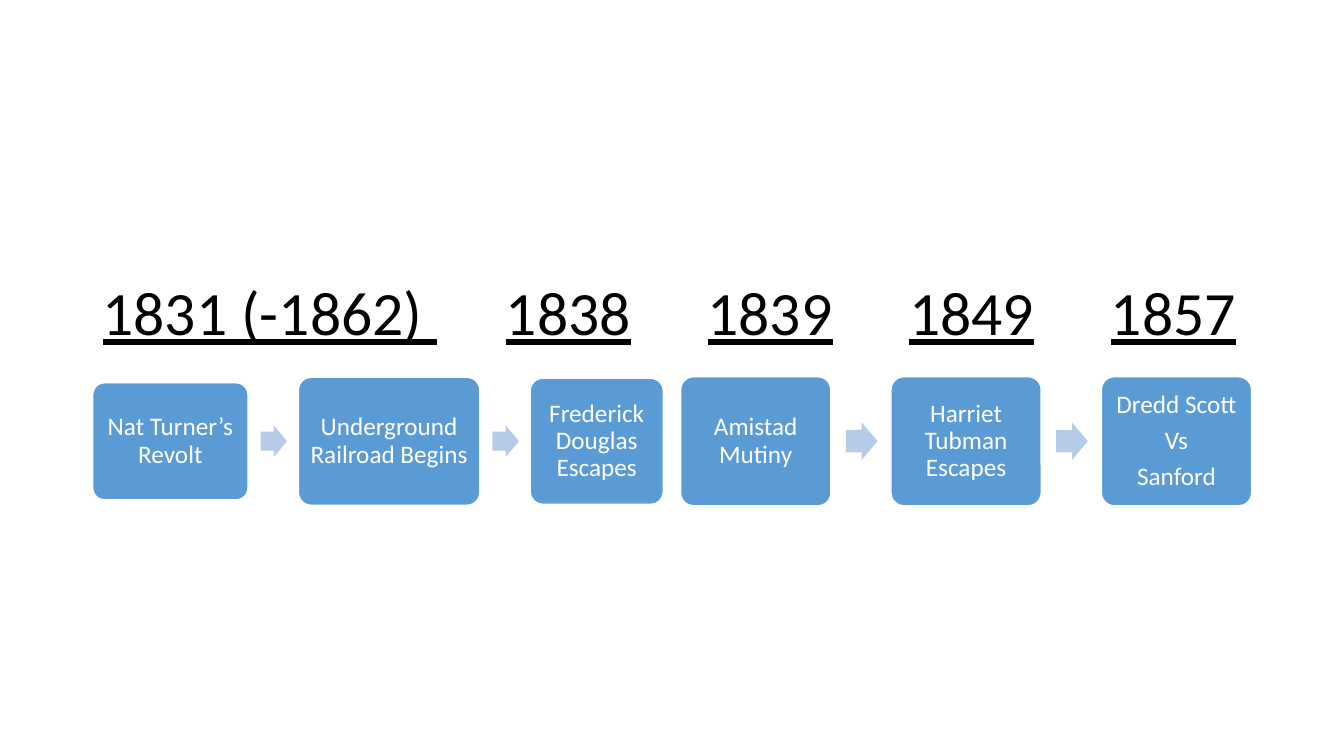
from dataclasses import dataclass
from lxml.etree import SubElement
from pptx import Presentation
from pptx.dml.color import RGBColor
from pptx.enum.shapes import MSO_SHAPE
from pptx.enum.text import MSO_ANCHOR, PP_ALIGN
from pptx.oxml.ns import qn
from pptx.util import Inches, Pt


@dataclass(frozen=True)
class Theme:
    font: str = "Calibri"
    year_size: int = 44
    event_size: int = 18
    ink: RGBColor = RGBColor(0x00, 0x00, 0x00)
    paper: RGBColor = RGBColor(0xFF, 0xFF, 0xFF)
    box: RGBColor = RGBColor(0x5B, 0x9B, 0xD5)
    arrow: RGBColor = RGBColor(0xB5, 0xCB, 0xE7)


THEME = Theme()
WIDTH, HEIGHT = Inches(13.33), Inches(7.5)
MIDDLE = 58.37
GAP, ARROW_INSET, ARROW_WIDTH, ARROW_HEIGHT = 0.4, 0.1, 0.21, 0.25

YEARS = ["1831 (-1862) ", "1838", "1839", "1849", "1857"]
YEAR_TABS = [4, 6, 8, 10]
EARLY_EVENTS = [
    ("Nat Turner’s Revolt", 11.55, 15.47),
    ("Underground Railroad Begins", 13.5, 16.93),
    ("Frederick Douglas Escapes", 9.9, 16.67),
]
LATE_EVENTS = [
    ("Amistad Mutiny", 11.18, 17.07),
    ("Harriet Tubman Escapes", 11.18, 17.07),
    ("Dredd Scott\nVs\nSanford", 11.18, 17.07),
]


def across(share):
    return round(WIDTH * share / 100)


def down(share):
    return round(HEIGHT * share / 100)


def style_paragraph(p, size, color):
    p.line_spacing = 0.9
    p.font.name = THEME.font
    p.font.size = Pt(size)
    p.font.color.rgb = color


def add_years(s):
    sp = s.shapes.add_textbox(across(6.9), down(30), across(86.27), down(23.6))
    tf = sp.text_frame
    tf.word_wrap = True
    tf.vertical_anchor = MSO_ANCHOR.MIDDLE
    p = tf.paragraphs[0]
    p.add_run().text = "\t".join(YEARS)
    tabs = SubElement(p._p.get_or_add_pPr(), qn("a:tabLst"))
    for stop in YEAR_TABS:
        SubElement(tabs, qn("a:tab"), pos=str(Inches(stop)), algn="l")
    style_paragraph(p, THEME.year_size, THEME.ink)
    p.font.underline = True


def add_centred_shape(s, kind, x, w, h, fill):
    sp = s.shapes.add_shape(kind, across(x), down(MIDDLE - h / 2), across(w), down(h))
    sp.shadow.inherit = False
    sp.fill.solid()
    sp.fill.fore_color.rgb = fill
    return sp


def add_event(s, text, x, w, h):
    sp = add_centred_shape(s, MSO_SHAPE.ROUNDED_RECTANGLE, x, w, h, THEME.box)
    sp.adjustments[0] = 0.1
    sp.line.color.rgb = THEME.paper
    sp.line.width = Pt(1)
    tf = sp.text_frame
    tf.word_wrap = True
    tf.vertical_anchor = MSO_ANCHOR.MIDDLE
    tf.margin_left = tf.margin_right = tf.margin_top = tf.margin_bottom = Inches(0.07)
    tf.text = text
    for p in tf.paragraphs:
        p.alignment = PP_ALIGN.CENTER
        p.space_after = Pt(0.35 * THEME.event_size)
        style_paragraph(p, THEME.event_size, THEME.paper)


def add_arrow(s, x, unit):
    h = ARROW_HEIGHT * unit * WIDTH / HEIGHT
    sp = add_centred_shape(s, MSO_SHAPE.RIGHT_ARROW, x, ARROW_WIDTH * unit, h, THEME.arrow)
    sp.adjustments[0] = 0.6
    sp.adjustments[1] = 0.5
    sp.line.fill.background()


def add_flow(s, events, x, unit):
    for i, (text, w, h) in enumerate(events):
        if i:
            add_arrow(s, x + ARROW_INSET * unit, unit)
            x += GAP * unit
        add_event(s, text, x, w, h)
        x += w


def main():
    prs = Presentation()
    prs.slide_width, prs.slide_height = WIDTH, HEIGHT
    s = prs.slides.add_slide(prs.slide_layouts[6])
    add_years(s)
    add_flow(s, EARLY_EVENTS, x=6.9, unit=9.38)
    add_flow(s, LATE_EVENTS, x=50.64, unit=11.18)
    prs.save("out.pptx")


if __name__ == "__main__":
    main()
